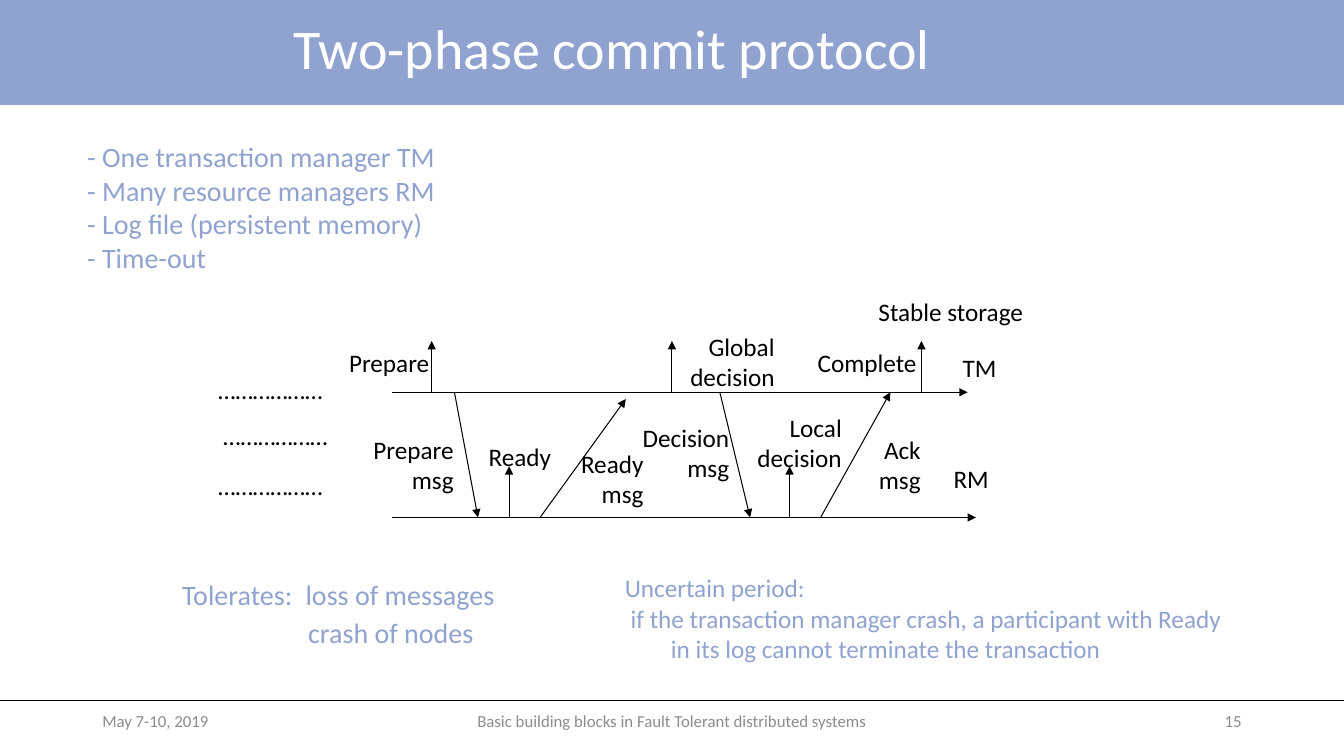
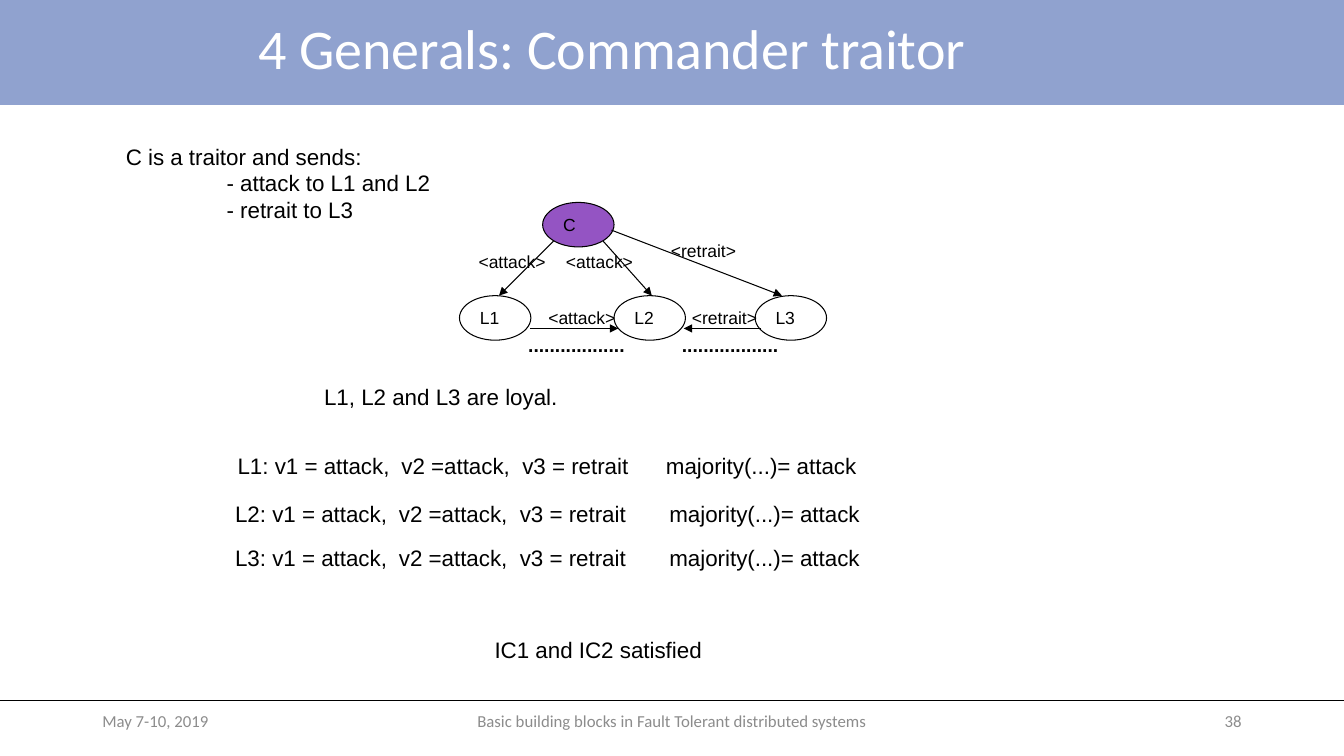
from dataclasses import dataclass

from lxml import etree
from pptx import Presentation
from pptx.dml.color import RGBColor
from pptx.enum.shapes import MSO_CONNECTOR, MSO_SHAPE
from pptx.enum.text import MSO_ANCHOR, MSO_AUTO_SIZE, PP_ALIGN
from pptx.oxml.ns import qn
from pptx.util import Inches, Pt

LEFT, CENTER, RIGHT = PP_ALIGN.LEFT, PP_ALIGN.CENTER, PP_ALIGN.RIGHT
TOP, MIDDLE = MSO_ANCHOR.TOP, MSO_ANCHOR.MIDDLE
FIT_TEXT, FIXED = MSO_AUTO_SIZE.SHAPE_TO_FIT_TEXT, MSO_AUTO_SIZE.NONE
RECTANGLE, OVAL = MSO_SHAPE.RECTANGLE, MSO_SHAPE.OVAL
STRAIGHT = MSO_CONNECTOR.STRAIGHT

# The slide is a grid of square cells
COLUMNS, ROWS = 160, 90
CELL = Inches(1 / 12)

BLUE, BLACK, WHITE = "90A2CF", "000000", "FFFFFF"
GRAY, PURPLE = "8C8C8C", "9454C3"


@dataclass(frozen=True)
class Style:
    size: float
    color: str = BLACK
    font: str = "Calibri"
    align: PP_ALIGN = LEFT
    bold: bool = False


@dataclass(frozen=True)
class Label:
    text: str
    left: float
    top: float
    width: float
    style: Style
    height: float = 0  # zero lets the box fit its text
    anchor: MSO_ANCHOR = TOP
    wrap: bool = False
    indents: tuple[float, ...] = ()  # one per paragraph
    tabs: tuple[float, ...] = ()
    gap: float = 0  # points between paragraphs
    line_spacing: float = 1


@dataclass(frozen=True)
class Arrow:
    x1: float
    y1: float
    x2: float
    y2: float


@dataclass(frozen=True)
class General:
    name: str
    left: float
    top: float
    fill: str = WHITE


TITLE = Style(40, WHITE, align=CENTER)
KEY_POINT = Style(20, BLUE)
REMARK = Style(18, BLUE)
NOTE = Style(18)
EVENT = Style(18, align=RIGHT)
BODY = Style(16, font="Arial")
MESSAGE = Style(12.5, font="Arial")
DOTS = Style(13.8, font="Arial", bold=True)


def cells(count: float) -> int:
    return round(count * CELL)


def color(value: str) -> RGBColor:
    return RGBColor.from_string(value)


def format_runs(paragraph, style: Style) -> None:
    paragraph.alignment = style.align
    for run in paragraph.runs:
        run.font.size = Pt(style.size)
        run.font.name = style.font
        run.font.bold = style.bold
        run.font.color.rgb = color(style.color)


def add_tabs(paragraph, stops: tuple[float, ...]) -> None:
    tab_list = etree.SubElement(paragraph._p.get_or_add_pPr(), qn("a:tabLst"))
    for stop in stops:
        etree.SubElement(tab_list, qn("a:tab"), pos=str(cells(stop)), algn="l")


def add_label(slide, label: Label) -> None:
    line_count = label.text.count("\n") + 1
    height = label.height or 1.2 + line_count * label.style.size * 0.2
    box = slide.shapes.add_textbox(
        cells(label.left), cells(label.top), cells(label.width), cells(height))
    frame = box.text_frame
    frame.text = label.text
    frame.word_wrap = label.wrap
    frame.auto_size = FIXED if label.height else FIT_TEXT
    frame.vertical_anchor = label.anchor
    for index, paragraph in enumerate(frame.paragraphs):
        if label.tabs:
            add_tabs(paragraph, label.tabs)
        if label.indents:
            properties = paragraph._p.get_or_add_pPr()
            properties.set("marL", str(cells(label.indents[index])))
        if index and label.gap:
            paragraph.space_before = Pt(label.gap)
        paragraph.line_spacing = label.line_spacing
        format_runs(paragraph, label.style)


def add_line(slide, line: Arrow, width: float = 0.75, head: bool = True) -> None:
    connector = slide.shapes.add_connector(
        STRAIGHT, cells(line.x1), cells(line.y1), cells(line.x2), cells(line.y2))
    connector.line.color.rgb = color(BLACK)
    connector.line.width = Pt(width)
    if head:
        outline = connector.line._get_or_add_ln()
        etree.SubElement(outline, qn("a:tailEnd"), type="triangle")
    etree.SubElement(connector._element.spPr, qn("a:effectLst"))


def add_general(slide, general: General) -> None:
    shape = slide.shapes.add_shape(
        OVAL, cells(general.left), cells(general.top), cells(8.5), cells(5.3))
    shape.shadow.inherit = False
    shape.fill.solid()
    shape.fill.fore_color.rgb = color(general.fill)
    shape.line.color.rgb = color(BLACK)
    shape.line.width = Pt(0.75)
    frame = shape.text_frame
    frame.text = general.name
    frame.word_wrap = False
    frame.vertical_anchor = MIDDLE
    format_runs(frame.paragraphs[0], MESSAGE)


def add_framed_slide(presentation, title: str, number: int):
    """Blank slide with title band, footer rule and footer texts."""
    slide = presentation.slides.add_slide(presentation.slide_layouts[6])
    band = slide.shapes.add_shape(RECTANGLE, 0, 0, cells(COLUMNS), cells(12.5))
    band.shadow.inherit = False
    band.fill.solid()
    band.fill.fore_color.rgb = color(BLUE)
    band.line.fill.background()
    footer_top = 83.4
    add_line(slide, Arrow(0, footer_top, COLUMNS, footer_top), 0.5, head=False)
    add_label(slide, Label(title, 0, 0, 145.7, TITLE, 12.2, MIDDLE, True,
                           line_spacing=0.9))
    footers = (
        ("May 7-10, 2019", 11, 36, LEFT),
        ("Basic building blocks in Fault Tolerant distributed systems", 53, 54, CENTER),
        (str(number), 113, 36, RIGHT),
    )
    for text, left, width, align in footers:
        add_label(slide, Label(text, left, footer_top, width,
                               Style(12, GRAY, align=align), 4.8, MIDDLE, True))
    return slide


def build_commit_slide(presentation) -> None:
    slide = add_framed_slide(presentation, "Two-phase commit protocol", 15)

    # Time lines of the manager (TM) and the resources (RM)
    manager, resource, log_height = 46.7, 61.6, 6.1
    arrows = [Arrow(46.7, manager, 115.2, manager),
              Arrow(46.7, resource, 116.2, resource)]

    # Writes to stable storage
    log_writes = ((51.4, manager), (80, manager), (109.7, manager),
                  (60.6, resource), (94, resource))
    arrows += [Arrow(x, y, x, y - log_height) for x, y in log_writes]

    # Messages between the time lines
    arrows += [Arrow(54.1, manager, 56.9, resource),
               Arrow(64.3, resource, 74.5, manager + 0.8),
               Arrow(85.7, manager, 89.3, resource),
               Arrow(97.7, resource, 106, manager)]
    for arrow in arrows:
        add_line(slide, arrow)

    events = (
        ("Prepare", 40.3, 40.7, 12),
        ("Ready", 57, 52, 9.8),
        ("Prepare\nmsg", 43.2, 51.1, 12),
        ("Ready\nmsg", 68, 52.8, 9.8),
        ("TM", 113.3, 41.4, 6.5),
        ("Complete", 96, 40.8, 14.3),
        ("Local\ndecision", 88.8, 48.5, 12.6),
        ("Decision\nmsg", 75.2, 49.7, 12.8),
        ("Ack\nmsg", 103.4, 51.1, 7.4),
        ("Global\ndecision", 80.8, 38.8, 12.6),
        ("RM", 112.3, 54.6, 6.6),
    )
    for event in events:
        add_label(slide, Label(*event, EVENT))
    for left, top in ((24.8, 44), (25.4, 49.4), (24.8, 55.4)):
        add_label(slide, Label("………………", left, top, 14.9, NOTE))
    add_label(slide, Label("Stable storage", 103.4, 34.7, 19.8, NOTE))

    # Explanations around the diagram
    add_label(slide, Label(
        "- One transaction manager TM\n- Many resource managers RM\n"
        "- Log file (persistent memory)\n- Time-out",
        9.2, 16, 47.3, KEY_POINT, wrap=True))
    add_label(slide, Label(
        "Tolerates:\tloss of messages\ncrash of nodes",
        20.5, 68.2, 95.5, KEY_POINT, wrap=True,
        indents=(0, 15), tabs=(14.7,), gap=3))
    add_label(slide, Label(
        "Uncertain period:\n"
        "if the transaction manager crash, a participant with Ready\n"
        "in its log cannot terminate the transaction",
        73.2, 67.6, 80, REMARK, wrap=True, indents=(0, 0.7, 5.5)))


def build_generals_slide(presentation) -> None:
    slide = add_framed_slide(presentation, "4 Generals: Commander traitor", 38)

    # Commander and lieutenants
    lieutenant_top, exchange = 35.2, 39.1
    generals = (General("C", 64.6, 24.1, PURPLE),
                General("L1", 54.7, lieutenant_top),
                General("L2", 73.1, lieutenant_top),
                General("L3", 89.9, lieutenant_top))
    for general in generals:
        add_general(slide, general)

    # Orders and their exchange
    arrows = (Arrow(65.9, 28.7, 59.4, lieutenant_top),
              Arrow(71.8, 28.7, 77.6, lieutenant_top),
              Arrow(72.8, 27.4, 93.1, lieutenant_top),
              Arrow(63.1, exchange, 73.6, exchange),
              Arrow(90.6, exchange, 81.4, exchange))
    for arrow in arrows:
        add_line(slide, arrow)
    messages = (("<attack>", 55.8, 29.3), ("<attack>", 66.2, 29.3),
                ("<retrait>", 78.7, 28), ("<attack>", 64.1, 35.9),
                ("<retrait>", 81.2, 35.9))
    for text, left, top in messages:
        add_label(slide, Label(text, left, top, 11, MESSAGE))
    for left in (61.7, 80):
        add_label(slide, Label("..................", left, exchange, 14.2, DOTS))

    # Assumptions, votes and conclusion
    add_label(slide, Label(
        "C is a traitor and sends:\n- attack to L1 and L2\n- retrait to L3",
        13.8, 16.4, 72.5, BODY, wrap=True, indents=(0, 12, 12)))
    add_label(slide, Label("L1, L2 and L3 are loyal.", 37.4, 45, 30.6, BODY))
    votes = (("L1", 27.1, 53.2, 51), ("L2", 26.8, 59, 51.7), ("L3", 26.8, 64.2, 51.7))
    for name, left, top, majority_tab in votes:
        add_label(slide, Label(
            f"{name}: v1 = attack,\tv2 =attack,\tv3 = retrait\tmajority(...)= attack",
            left, top, 88, BODY, wrap=True, tabs=(19.5, 33.9, majority_tab)))
    add_label(slide, Label("IC1 and IC2 satisfied", 57.7, 75.1, 27.4, BODY))


def main() -> None:
    presentation = Presentation()
    presentation.slide_width = cells(COLUMNS)
    presentation.slide_height = cells(ROWS)
    build_commit_slide(presentation)
    build_generals_slide(presentation)
    presentation.save("out.pptx")


if __name__ == "__main__":
    main()
